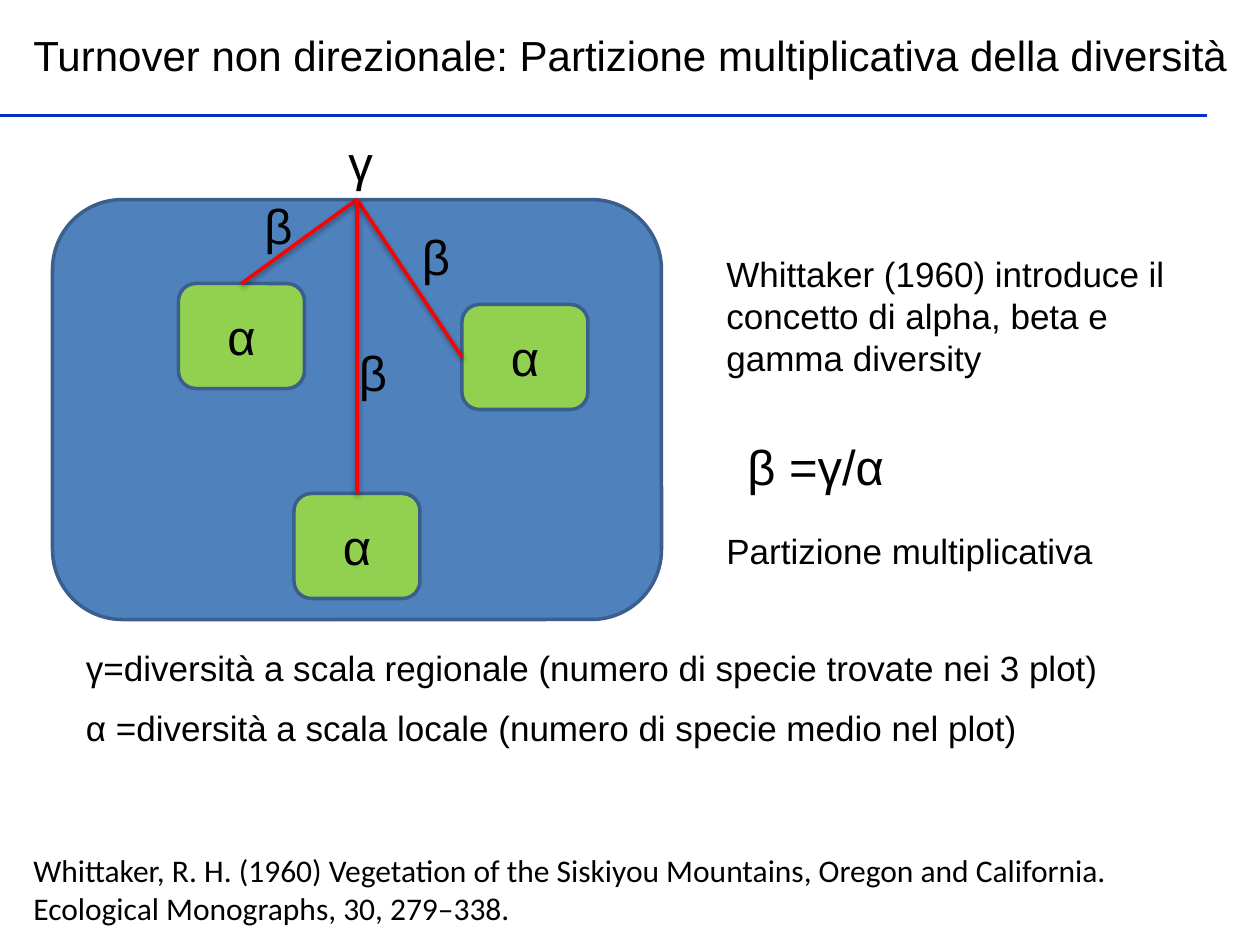
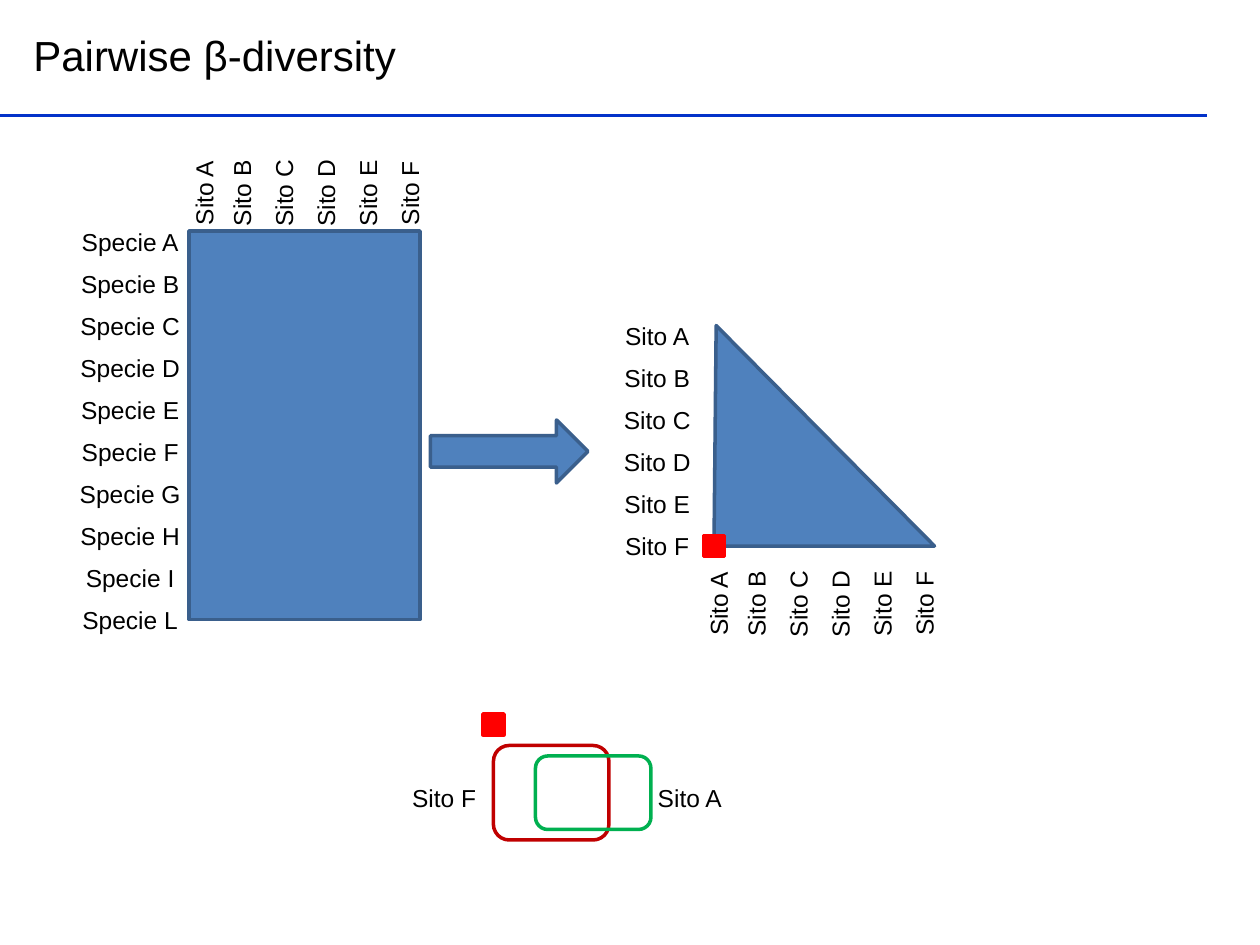
from lxml import etree
from pptx import Presentation
from pptx.dml.color import RGBColor
from pptx.enum.shapes import MSO_CONNECTOR, MSO_SHAPE
from pptx.enum.text import MSO_ANCHOR, MSO_AUTO_SIZE, PP_ALIGN
from pptx.oxml.ns import qn
from pptx.util import Inches, Pt

RECT, ROUNDED = MSO_SHAPE.RECTANGLE, MSO_SHAPE.ROUNDED_RECTANGLE
ARROW, TRIANGLE = MSO_SHAPE.RIGHT_ARROW, MSO_SHAPE.ISOSCELES_TRIANGLE
STRAIGHT = MSO_CONNECTOR.STRAIGHT
LEFT, CENTER = PP_ALIGN.LEFT, PP_ALIGN.CENTER
TOP, MIDDLE = MSO_ANCHOR.TOP, MSO_ANCHOR.MIDDLE
FIT_TEXT = MSO_AUTO_SIZE.SHAPE_TO_FIT_TEXT
TOP_SIDE, LEFT_SIDE = 0, 1

BLACK, RULE, BLUE, OUTLINE = "000000", "0332C9", "4F81BD", "3A5F8C"
GREEN, RED, DARK_RED, EMERALD = "92D050", "FF0000", "C00000", "00B050"

COLUMNS, ROWS = 120, 90
CELL = Inches(10) / COLUMNS
LABEL_WIDTH, LABEL_HEIGHT, LABEL_STEP = 12, 4, 4


def color(hex_code):
    return RGBColor.from_string(hex_code)


def cells(*counts):
    """Turn counts of grid cells into slide lengths."""
    return [round(count * CELL) for count in counts]


def write(frame, text, size=20, font="Arial", align=LEFT, anchor=TOP, wrap=True):
    frame.word_wrap = wrap
    frame.vertical_anchor = anchor
    paragraph = frame.paragraphs[0]
    paragraph.alignment = align
    run = paragraph.add_run()
    run.text = text
    run.font.size = Pt(size)
    run.font.name = font
    run.font.color.rgb = color(BLACK)


def add_text(slide, text, box, rotation=0, **text_format):
    textbox = slide.shapes.add_textbox(*cells(*box))
    write(textbox.text_frame, text, **text_format)
    textbox.text_frame.auto_size = FIT_TEXT
    textbox.rotation = rotation


def add_label(slide, text, center_x, center_y, rotation=0):
    """Place a small label by its centre."""
    box = (center_x - LABEL_WIDTH / 2, center_y - LABEL_HEIGHT / 2,
           LABEL_WIDTH, LABEL_HEIGHT)
    add_text(slide, text, box, rotation, size=14, align=CENTER, wrap=False)


def add_block(slide, preset, box, fill=BLUE, line=OUTLINE):
    block = slide.shapes.add_shape(preset, *cells(*box))
    block.shadow.inherit = False
    if fill:
        block.fill.solid()
        block.fill.fore_color.rgb = color(fill)
    else:
        block.fill.background()
    block.line.color.rgb = color(line)
    block.line.width = Pt(2)
    return block


def add_line(slide, start, end, line, shadow=False):
    connector = slide.shapes.add_connector(STRAIGHT, *cells(*start, *end))
    connector.line.color.rgb = color(line)
    connector.line.width = Pt(2)
    effects = etree.SubElement(connector._element.spPr, qn("a:effectLst"))
    if shadow:
        outer = etree.SubElement(effects, qn("a:outerShdw"), blurRad=str(Pt(3.1)),
                                 dist=str(Pt(1.6)), dir="5400000", rotWithShape="0")
        shade = etree.SubElement(outer, qn("a:srgbClr"), val=BLACK)
        etree.SubElement(shade, qn("a:alpha"), val="38000")
    return connector


def add_titled_slide(deck, title, title_width):
    slide = deck.slides.add_slide(deck.slide_layouts[6])
    add_line(slide, (0, 11), (115, 11), RULE)
    add_text(slide, title, (2, 2.2, title_width, 6), size=24, anchor=MIDDLE)
    return slide


def add_site_columns(slide, first_x, center_y):
    for index, site in enumerate("ABCDEF"):
        nudge = 0.4 if index == 0 else 0
        add_label(slide, f"Sito {site}", first_x + index * LABEL_STEP + nudge,
                  center_y, rotation=270)


def add_label_rows(slide, kind, letters, center_x, first_y):
    for index, letter in enumerate(letters):
        add_label(slide, f"{kind} {letter}", center_x, first_y + index * LABEL_STEP)


def build_partition_slide(deck):
    slide = add_titled_slide(
        deck, "Turnover non direzionale: Partizione multiplicativa della diversità", 123)
    region = add_block(slide, ROUNDED, (5, 19, 58, 40))
    plots = []
    for left, top in ((17, 27), (44, 29), (28, 47)):
        plot = add_block(slide, ROUNDED, (left, top, 12, 10), GREEN)
        write(plot.text_frame, "α", size=28, align=CENTER, anchor=MIDDLE)
        plots.append(plot)

    add_text(slide, "γ", (32, 12, 4.8, 6.8), size=28, wrap=False)
    for left, top in ((33, 32), (24, 18), (39, 21)):
        add_text(slide, "β", (left, top, 6, 6.8), size=28, anchor=MIDDLE)

    starts = ((23, 27), (44, 34), (34, 47))
    for plot, start, side in zip(plots, starts, (TOP_SIDE, LEFT_SIDE, TOP_SIDE)):
        turnover = add_line(slide, start, (34, 19), RED, shadow=True)
        turnover.begin_connect(plot, side)
        turnover.end_connect(region, TOP_SIDE)

    add_text(slide, "Whittaker (1960) introduce il concetto di alpha, beta e gamma diversity",
             (68, 23.4, 49, 13.3), anchor=MIDDLE)
    add_text(slide, "β =γ/α", (70, 41, 18.4, 6.8), size=28)
    add_text(slide, "Partizione multiplicativa", (68, 49.8, 49, 5.3), anchor=MIDDLE)
    add_text(slide, "γ=diversità a scala regionale (numero di specie trovate nei 3 plot)",
             (7, 61, 116, 5.3))
    add_text(slide, "α =diversità a scala locale (numero di specie medio nel plot)",
             (7, 66.7, 94, 5.3))
    add_text(slide, "Whittaker, R. H. (1960) Vegetation of the Siskiyou Mountains, Oregon "
             "and California. Ecological Monographs, 30, 279–338.",
             (2, 80.5, 114, 8.5), size=18, font="Calibri")


def build_pairwise_slide(deck):
    slide = add_titled_slide(deck, "Pairwise β-diversity", 102)
    add_block(slide, RECT, (18, 22, 22, 37))
    add_block(slide, ARROW, (41, 40, 15, 6))
    distances = add_block(slide, TRIANGLE, (68, 31, 21, 21))
    distances.adjustments[0] = 0.01

    add_site_columns(slide, 19, 18.4)
    add_site_columns(slide, 68, 57.5)
    add_label_rows(slide, "Sito", "ABCDEF", 62.6, 32)
    add_label_rows(slide, "Specie", "ABCDEFGHIL", 12.4, 23)

    for left, top in ((67, 51), (46, 68)):
        add_block(slide, RECT, (left, top, 2, 2), RED, RED)
    add_block(slide, ROUNDED, (47, 71, 11, 9), None, DARK_RED)
    add_block(slide, ROUNDED, (51, 72, 11, 7), None, EMERALD)
    add_label(slide, "Sito A", 65.7, 76)
    add_label(slide, "Sito F", 42.3, 76)


def main():
    deck = Presentation()
    deck.slide_width, deck.slide_height = cells(COLUMNS, ROWS)
    build_partition_slide(deck)
    build_pairwise_slide(deck)
    deck.save("out.pptx")


if __name__ == "__main__":
    main()
